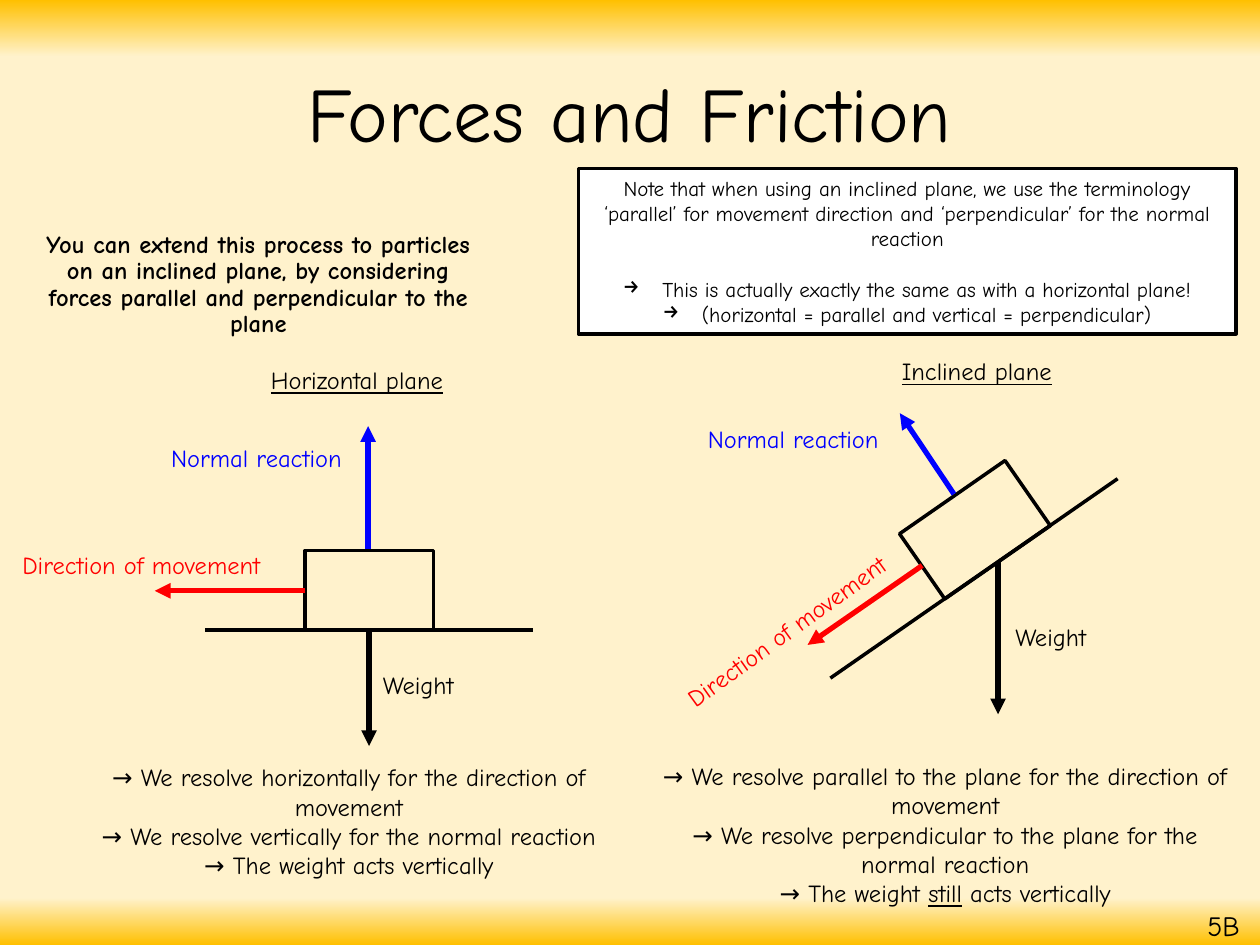
from dataclasses import dataclass

from lxml import etree
from pptx import Presentation
from pptx.dml.color import RGBColor
from pptx.enum.shapes import MSO_CONNECTOR, MSO_SHAPE
from pptx.enum.text import MSO_ANCHOR, MSO_AUTO_SIZE, PP_ALIGN
from pptx.oxml import parse_xml
from pptx.oxml.ns import nsdecls, qn
from pptx.util import Cm, Pt

CENTER, LEFT = PP_ALIGN.CENTER, PP_ALIGN.LEFT
TOP, MIDDLE = MSO_ANCHOR.TOP, MSO_ANCHOR.MIDDLE
FIXED, GROW = MSO_AUTO_SIZE.NONE, MSO_AUTO_SIZE.SHAPE_TO_FIT_TEXT
RECTANGLE, STRAIGHT = MSO_SHAPE.RECTANGLE, MSO_CONNECTOR.STRAIGHT


@dataclass(frozen=True)
class Theme:
    font: str = "Comic Neue"
    ink: str = "000000"
    movement: str = "FF0000"
    reaction: str = "0000FF"
    paper: str = "FFFFFF"
    background: tuple = ((0, "FFC000"), (6, "FFF2CC"), (95, "FFF2CC"), (100, "FFC000"))
    title: int = 44
    tag: int = 16
    body: int = 14
    note: int = 12
    outline: int = 2
    arrow: int = 3


class SlideBuilder:
    def __init__(self, prs, theme):
        self.theme = theme
        self.s = prs.slides.add_slide(prs.slide_layouts[1])

    def background(self):
        stops = "".join(
            f'<a:gs pos="{pos * 1000}"><a:srgbClr val="{color}"/></a:gs>'
            for pos, color in self.theme.background)
        self.s.background.fill.solid()
        bg_pr = self.s.element.cSld.find(qn("p:bg")).find(qn("p:bgPr"))
        bg_pr.replace(bg_pr[0], parse_xml(
            f'<a:gradFill {nsdecls("a")} rotWithShape="1"><a:gsLst>{stops}</a:gsLst>'
            '<a:lin ang="5400000" scaled="0"/></a:gradFill>'))

    def style(self, p, size, color=None, align=CENTER, bold=False, underline=False):
        p.alignment = align
        p.font.name = self.theme.font
        p.font.size = Pt(size)
        p.font.bold = bold
        p.font.underline = underline
        p.font.color.rgb = RGBColor.from_string(color or self.theme.ink)

    def fill_text(self, tf, paragraphs, size, **style):
        """Each paragraph is a string or a list of (text, underlined) runs."""
        for i, content in enumerate(paragraphs):
            p = tf.add_paragraph() if i else tf.paragraphs[0]
            self.style(p, size, **style)
            runs = [(content, None)] if isinstance(content, str) else content
            for text, underlined in runs:
                r = p.add_run()
                r.text = text
                r.font.underline = underlined

    def bullet(self, p, char=None, indent=0):
        p_pr = p._p.get_or_add_pPr()
        p_pr.set("marL", str(Cm(indent)))
        p_pr.set("indent", str(-Cm(indent)))
        if char:
            etree.SubElement(p_pr, qn("a:buChar")).set("char", char)
        else:
            etree.SubElement(p_pr, qn("a:buNone"))
        # Default run properties come last in the paragraph properties
        p_pr.append(p_pr.find(qn("a:defRPr")))

    def placeholder(self, index, box, text, size, anchor, bold=False):
        sp = self.s.placeholders[index]
        sp.left, sp.top, sp.width, sp.height = map(Cm, box)
        tf = sp.text_frame
        tf.auto_size = FIXED
        tf.vertical_anchor = anchor
        self.fill_text(tf, [text], size, bold=bold)
        p = tf.paragraphs[0]
        p.line_spacing = 0.9
        self.bullet(p)

    def text(self, box, paragraphs, size=None, wrap=True, rotation=0, **style):
        sp = self.s.shapes.add_textbox(*map(Cm, box))
        sp.rotation = rotation
        tf = sp.text_frame
        tf.word_wrap = wrap
        tf.auto_size = GROW
        self.fill_text(tf, paragraphs, size or self.theme.body, **style)

    def label(self, left, top, width, text, rotation=0, **style):
        self.text((left, top, width, 0.86), [text], wrap=False, rotation=rotation,
                  align=LEFT, **style)

    def rectangle(self, box, fill=None, rotation=0):
        sp = self.s.shapes.add_shape(RECTANGLE, *map(Cm, box))
        sp.shadow.inherit = False
        sp.rotation = rotation
        if fill:
            sp.fill.solid()
            sp.fill.fore_color.rgb = RGBColor.from_string(fill)
        else:
            sp.fill.background()
        sp.line.color.rgb = RGBColor.from_string(self.theme.ink)
        sp.line.width = Pt(self.theme.outline)
        return sp

    def line(self, start, end, color=None, arrow=False):
        c = self.s.shapes.add_connector(STRAIGHT, *map(Cm, start + end))
        c.line.color.rgb = RGBColor.from_string(color or self.theme.ink)
        c.line.width = Pt(self.theme.arrow if arrow else self.theme.outline)
        sp_pr = c._element.spPr
        if arrow:
            etree.SubElement(sp_pr.find(qn("a:ln")), qn("a:tailEnd")).set("type", "triangle")
        etree.SubElement(sp_pr, qn("a:effectLst"))

    def note(self, box, intro, points):
        sp = self.rectangle(box, self.theme.paper)
        tf = sp.text_frame
        tf.word_wrap = True
        tf.auto_size = GROW
        self.fill_text(tf, [intro] + points, self.theme.note)
        bulleted = tf.paragraphs[1:]
        bulleted[0].space_before = Pt(self.theme.note * 1.2)
        for p in bulleted:
            self.bullet(p, "→", 0.79)


def main():
    prs = Presentation()
    prs.slide_width, prs.slide_height = Cm(25.4), Cm(19.05)
    theme = Theme()
    s = SlideBuilder(prs, theme)
    s.background()

    # Title, introduction and section tag
    s.placeholder(0, (1.75, 0.53, 21.9, 3.68), "Forces and Friction", theme.title, MIDDLE)
    s.placeholder(1, (0.46, 4.55, 9.5, 12.57),
                  "You can extend this process to particles on an inclined plane, by "
                  "considering forces parallel and perpendicular to the plane",
                  theme.body, TOP, bold=True)
    s.text((23.93, 18.19, 1.47, 0.86), ["5B"], theme.tag)

    # Headings
    s.label(5.21, 7.24, 4.29, "Horizontal plane", underline=True)
    s.label(17.93, 7.06, 3.76, "Inclined plane", underline=True)

    # Planes and blocks
    s.line((4.14, 12.7), (10.74, 12.7))
    s.line((16.74, 13.67), (22.53, 9.65))
    s.rectangle((6.15, 11.1, 2.59, 1.6))
    s.rectangle((18.36, 9.88, 2.59, 1.6), rotation=325.2)

    # Force arrows
    for start, end, color in (
        ((6.15, 11.91), (3.12, 11.91), theme.movement),
        ((7.42, 11.07), (7.42, 8.59), theme.reaction),
        ((7.44, 12.7), (7.44, 15.04), theme.ink),
        ((18.59, 11.4), (16.28, 13), theme.movement),
        ((19.23, 9.96), (18.14, 8.33), theme.reaction),
        ((20.12, 11.33), (20.12, 14.4), theme.ink),
    ):
        s.line(start, end, color, arrow=True)

    # Force labels: horizontal plane, then inclined plane
    for text, width, color, places in (
        ("Direction of movement", 5.82, theme.movement,
         ((0.2, 10.97, 0), (13.16, 12.14, 324.1))),
        ("Normal reaction", 4.27, theme.reaction, ((3.2, 8.81, 0), (14.02, 8.43, 0))),
        ("Weight", 2.24, theme.ink, ((7.47, 13.39, 0), (20.22, 12.42, 0))),
    ):
        for left, top, rotation in places:
            s.label(left, top, width, text, rotation, color=color)

    # Conclusions
    s.text((1.04, 15.24, 11.99, 2.64), [
        "→ We resolve horizontally for the direction of movement",
        "→ We resolve vertically for the normal reaction",
        "→ The weight acts vertically",
    ])
    s.text((13.06, 15.21, 11.99, 3.25), [
        "→ We resolve parallel to the plane for the direction of movement",
        "→ We resolve perpendicular to the plane for the normal reaction",
        [("→ The weight ", None), ("still", True), (" acts vertically", None)],
    ])

    # Terminology note
    s.note((11.66, 3.4, 13.26, 3.33),
           "Note that when using an inclined plane, we use the terminology ‘parallel’ for "
           "movement direction and ‘perpendicular’ for the normal reaction",
           ["This is actually exactly the same as with a horizontal plane!",
            "(horizontal = parallel and vertical = perpendicular)"])

    prs.save("out.pptx")


if __name__ == "__main__":
    main()
